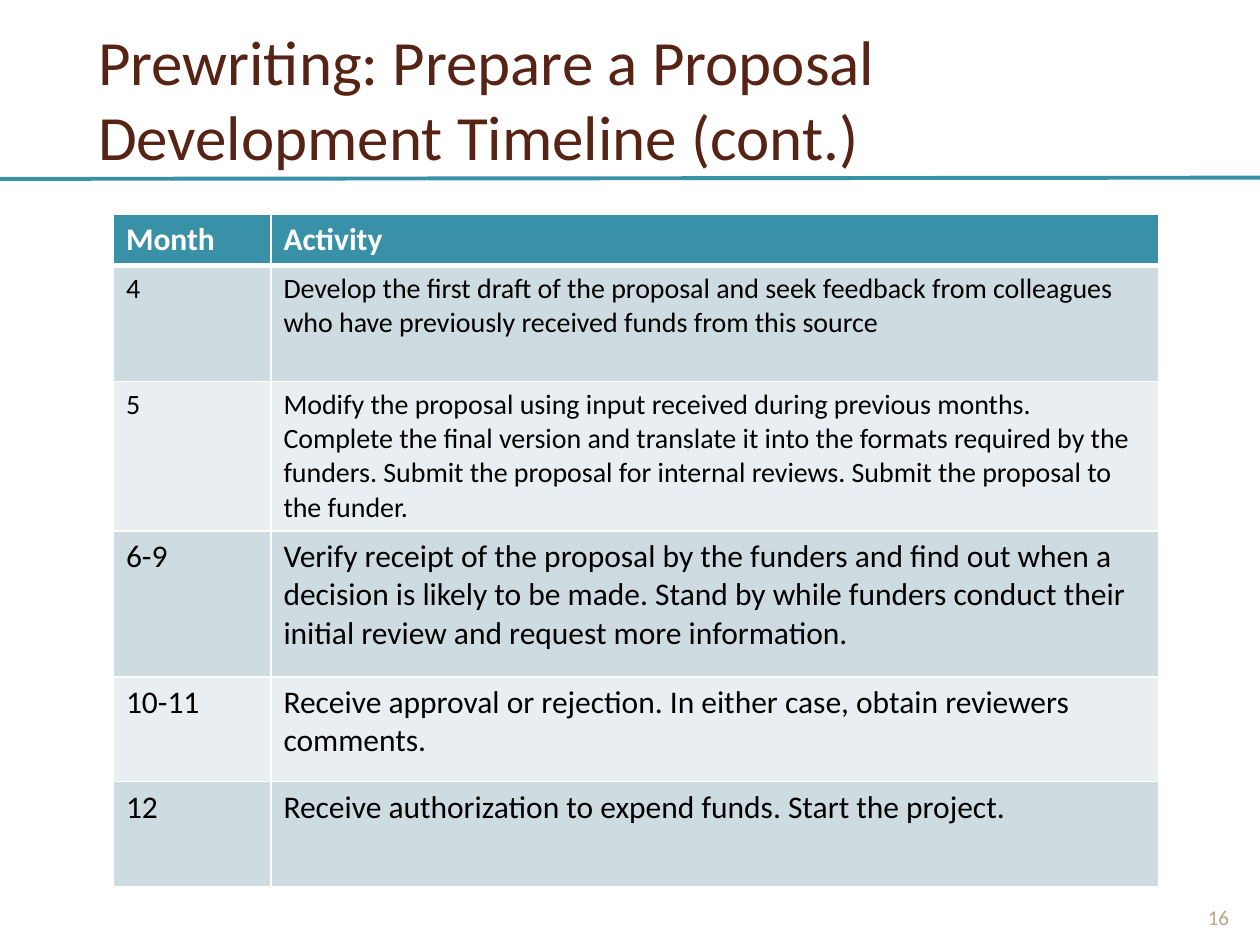
import dataclasses
import typing

import pptx
import pptx.dml.color
import pptx.enum.shapes
import pptx.enum.text
import pptx.oxml
import pptx.oxml.ns
import pptx.util

Inch = pptx.util.Inches
Pt = pptx.util.Pt
Color = pptx.dml.color.RGBColor.from_string
Align = pptx.enum.text.PP_ALIGN
Anchor = pptx.enum.text.MSO_ANCHOR
WIDE, HIGH = 10, 7.5


@dataclasses.dataclass(frozen=True)
class Theme:
    font: str = "Calibri"
    teal: str = "3891A7"
    brown: str = "572314"
    tan: str = "B5A788"
    white: str = "FFFFFF"
    black: str = "000000"
    bands: tuple = ("CEDCE1", "E8EEF1")
    title: int = 36
    large: int = 18
    body: int = 16
    small: int = 12
    rule: float = 2.25
    thin: int = 1
    thick: int = 3


@dataclasses.dataclass(frozen=True)
class Box:
    left: float
    top: float
    width: float
    height: float

    def place(self) -> tuple:
        return (Inch(self.left * WIDE), Inch(self.top * HIGH),
                Inch(self.width * WIDE), Inch(self.height * HIGH))


@dataclasses.dataclass(frozen=True)
class Label:
    text: str
    box: Box
    size: int
    color: str
    anchor: typing.Any
    align: typing.Any


@dataclasses.dataclass(frozen=True)
class Step:
    month: str
    task: str
    height: float
    size: int


THEME = Theme()
LABELS = (
    Label("Prewriting: Prepare a Proposal Development Timeline (cont.)",
          Box(0.068, 0, 0.896, 0.207), THEME.title, THEME.brown,
          Anchor.MIDDLE, Align.LEFT),
    Label("16", Box(0.942, 0.92, 0.05, 0.07), THEME.small, THEME.tan,
          Anchor.BOTTOM, Align.CENTER),
)
GRID = Box(0.09, 0.227, 0.83, 0.695)
COLS = (1.25, 7.05)
STEPS = (
    Step("Month", "Activity", 0.4, THEME.large),
    Step("4", "Develop the first draft of the proposal and seek feedback from "
         "colleagues who have previously received funds from this source",
         0.92, THEME.body),
    Step("5", "Modify the proposal using input received during previous months. "
         "Complete the final version and translate it into the formats required "
         "by the funders. Submit the proposal for internal reviews. Submit the "
         "proposal to the funder.", 1.07, THEME.body),
    Step("6-9", "Verify receipt of the proposal by the funders and find out when a "
         "decision is likely to be made. Stand by while funders conduct their "
         "initial review and request more information.", 1.16, THEME.large),
    Step("10-11", "Receive approval or rejection. In either case, obtain reviewers "
         "comments.", 0.83, THEME.large),
    Step("12", "Receive authorization to expend funds. Start the project.",
         0.83, THEME.large),
)


def assign(item: typing.Any, values: dict) -> None:
    for name, value in values.items():
        setattr(item, name, value)


def write(frame: typing.Any, text: str, size: int, color: str,
          bold: bool = False, align: typing.Any = Align.LEFT) -> None:
    frame.word_wrap = True
    line = frame.paragraphs[0]
    line.alignment = align
    run = line.add_run()
    run.text = text
    assign(run.font, {"name": THEME.font, "size": Pt(size), "bold": bold})
    run.font.color.rgb = Color(color)


def label(slide: typing.Any, item: Label) -> None:
    frame = slide.shapes.add_textbox(*item.box.place()).text_frame
    frame.vertical_anchor = item.anchor
    write(frame, item.text, item.size, item.color, align=item.align)


def rule(slide: typing.Any) -> None:
    line = slide.shapes.add_connector(
        pptx.enum.shapes.MSO_CONNECTOR.STRAIGHT,
        0, Inch(1.42), Inch(WIDE), Inch(1.41))
    line.line.width = Pt(THEME.rule)
    line.line.color.rgb = Color(THEME.teal)
    props = line._element.spPr
    props.append(props.makeelement(pptx.oxml.ns.qn("a:effectLst"), {}))


def edge(cell: typing.Any, widths: dict) -> None:
    props = cell._tc.get_or_add_tcPr()
    for place, (side, width) in enumerate(widths.items()):
        props.insert(place, pptx.oxml.parse_xml(
            f'<a:ln{side} {pptx.oxml.ns.nsdecls("a")} w="{Pt(width)}">'
            f'<a:solidFill><a:srgbClr val="{THEME.white}"/></a:solidFill>'
            f'</a:ln{side}>'))


def chart(slide: typing.Any) -> None:
    table = slide.shapes.add_table(len(STEPS), len(COLS), *GRID.place()).table
    for col, width in zip(table.columns, COLS):
        col.width = Inch(width)
    for index, step in enumerate(STEPS):
        head = index == 0
        table.rows[index].height = Inch(step.height)
        fill = THEME.teal if head else THEME.bands[(index - 1) % 2]
        ink = THEME.white if head else THEME.black
        sides = dict.fromkeys("LRTB", THEME.thin)
        if head:
            sides["B"] = THEME.thick
        elif index == 1:
            sides["T"] = THEME.thick
        for cell, text in zip(table.rows[index].cells, (step.month, step.task)):
            cell.fill.solid()
            cell.fill.fore_color.rgb = Color(fill)
            write(cell.text_frame, text, step.size, ink, head)
            edge(cell, sides)


def main() -> None:
    deck = pptx.Presentation()
    assign(deck, {"slide_width": Inch(WIDE), "slide_height": Inch(HIGH)})
    slide = deck.slides.add_slide(deck.slide_layouts[6])
    rule(slide)
    chart(slide)
    for item in LABELS:
        label(slide, item)
    deck.save("out.pptx")


if __name__ == "__main__":
    main()
